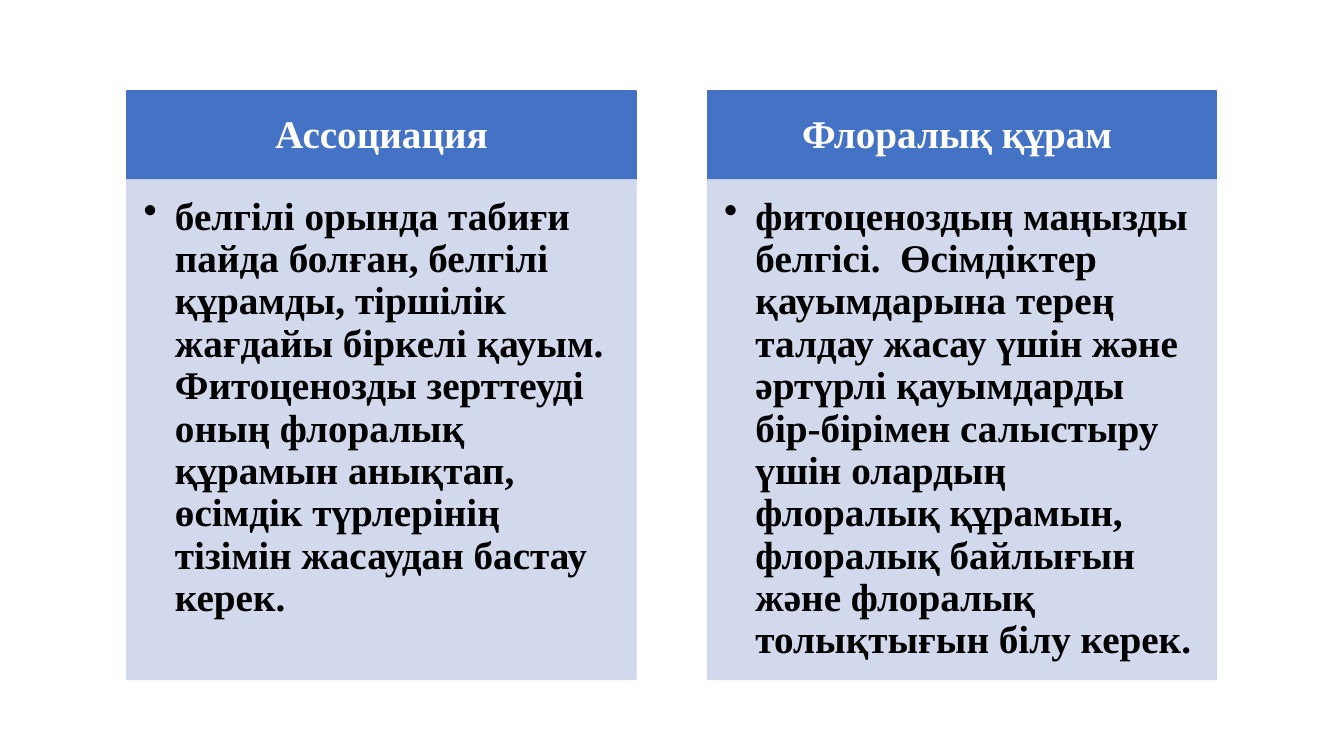
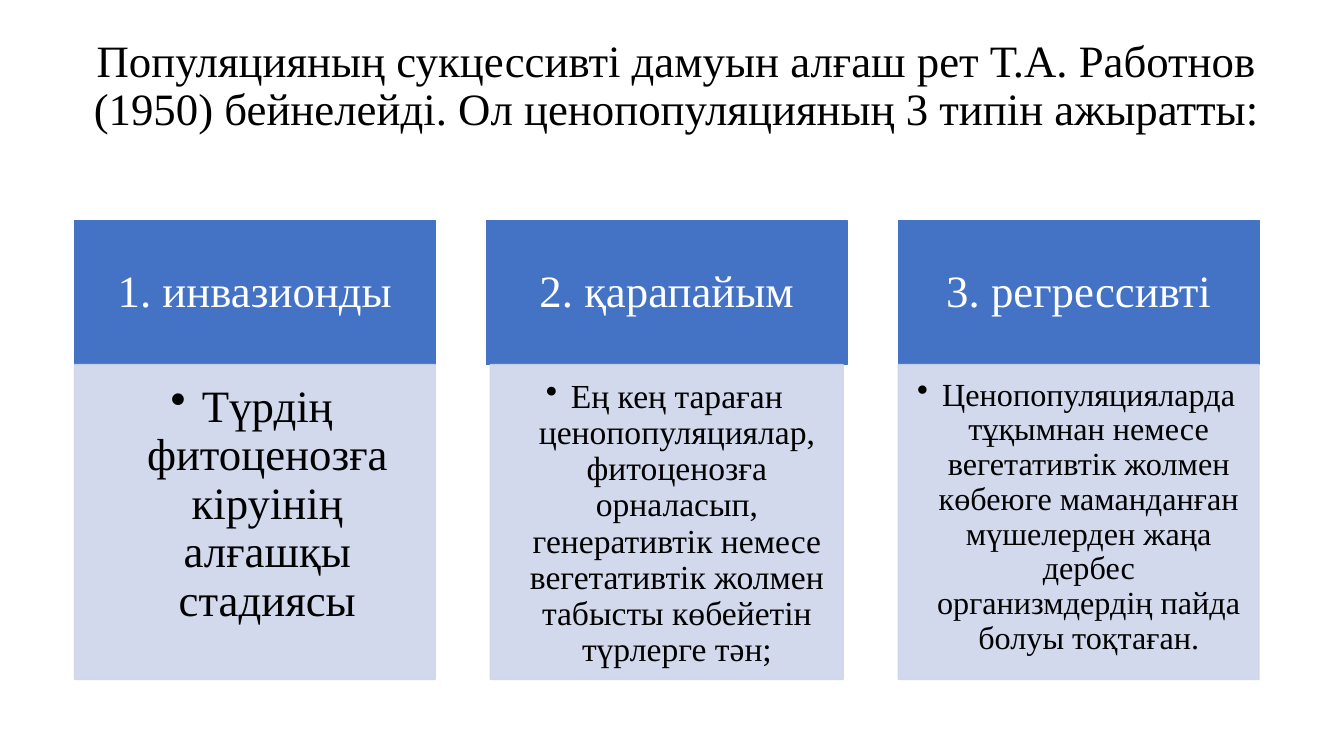
from lxml import etree
from pptx import Presentation
from pptx import util as u
from pptx.dml.color import RGBColor
from pptx.enum import shapes, text
from pptx.oxml.ns import qn

COLORS = {"header": "4472C4", "body": "CFD5EA", "light": "FFFFFF", "dark": "000000"}
FONT = "Times New Roman"
BOTTOM = 17.12
BODY_OPACITY = 90

ASSOCIATION = [
    ("Ассоциация",
     "белгілі орында табиғи пайда болған, белгілі құрамды, тіршілік жағдайы біркелі "
     "қауым. Фитоценозды зерттеуді оның флоралық құрамын анықтап, өсімдік түрлерінің "
     "тізімін жасаудан бастау керек.", 28, 0),
    ("Флоралық құрам ",
     "фитоценоздың маңызды белгісі.  Өсімдіктер қауымдарына терең талдау жасау үшін "
     "және әртүрлі қауымдарды бір-бірімен салыстыру үшін олардың флоралық құрамын, "
     "флоралық байлығын және флоралық толықтығын білу керек.", 28, 0),
]
TITLE = ("Популяцияның сукцессивті дамуын алғаш рет Т.А. Работнов (1950) бейнелейді. "
         "Ол ценопопуляцияның 3 типін ажыратты:")
POPULATION_TYPES = [
    ("1. инвазионды", "Түрдің фитоценозға кіруінің алғашқы стадиясы", 32, 0),
    ("2. қарапайым",
     "Ең кең тараған ценопопуляциялар, фитоценозға орналасып, генеративтік немесе "
     "вегетативтік жолмен табысты көбейетін түрлерге тән;", 24, 0.1),
    ("3. регрессивті",
     "Ценопопуляцияларда тұқымнан немесе вегетативтік жолмен көбеюге маманданған "
     "мүшелерден жаңа дербес организмдердің пайда болуы тоқтаған.", 23, 0),
]


def rgb(name):
    return RGBColor.from_string(COLORS[name])


def write(tf, content, size, color, bold=False, align=text.PP_ALIGN.CENTER):
    tf.text = content
    tf.word_wrap = True
    tf.auto_size = text.MSO_AUTO_SIZE.NONE
    p = tf.paragraphs[0]
    p.alignment = align
    p.line_spacing = 0.9
    font = p.runs[0].font
    font.name, font.size, font.bold = FONT, u.Pt(size), bold
    font.color.rgb = rgb(color)
    return p


def set_margins(tf, left, top, right, bottom):
    tf.margin_left, tf.margin_top = u.Cm(left), u.Cm(top)
    tf.margin_right, tf.margin_bottom = u.Cm(right), u.Cm(bottom)


def add_bullet(p, indent):
    p.level = 1
    pPr = p._p.get_or_add_pPr()
    pPr.set("marL", str(u.Cm(indent)))
    pPr.set("indent", str(-u.Cm(indent)))
    etree.SubElement(pPr, qn("a:buChar"), char="•")


def add_box(s, left, top, width, height, color, opacity=100):
    sp = s.shapes.add_shape(shapes.MSO_SHAPE.RECTANGLE,
                            u.Cm(left), u.Cm(top), u.Cm(width), u.Cm(height))
    sp.shadow.inherit = False
    sp.fill.solid()
    sp.fill.fore_color.rgb = rgb(color)
    sp.line.color.rgb = rgb(color)
    sp.line.width = u.Pt(1)
    if opacity < 100:
        for clr in sp._element.spPr.iter(qn("a:srgbClr")):
            etree.SubElement(clr, qn("a:alpha"), val=str(opacity * 1000))
    return sp


def add_header(s, left, top, width, height, content, size, bold):
    tf = add_box(s, left, top, width, height, "header").text_frame
    write(tf, content, size, "light", bold)
    tf.vertical_anchor = text.MSO_ANCHOR.MIDDLE
    side, edge = 0.02 * size, 0.01125 * size
    set_margins(tf, side, edge, side, edge)


def add_body(s, left, top, width, content, size, bold, align):
    tf = add_box(s, left, top, width, BOTTOM - top, "body", BODY_OPACITY).text_frame
    p = write(tf, content, size, "dark", bold, align)
    tf.vertical_anchor = text.MSO_ANCHOR.TOP
    set_margins(tf, 0.015 * size, 0.015 * size, 0.02 * size, 0.0225 * size)
    add_bullet(p, 0.79 if size >= 28 else 0.63)


def add_columns(s, columns, left, top, width, gap, header_height, header_size,
                bold=False, align=text.PP_ALIGN.CENTER):
    """Each column is (heading, body text, body size, body side inset in cm)."""
    for i, (heading, content, size, inset) in enumerate(columns):
        x = left + i * (width + gap)
        add_header(s, x, top, width, header_height, heading, header_size, bold)
        add_body(s, x + inset, top + header_height, width - 2 * inset,
                 content, size, bold, align)


def add_title(s, content):
    sp = s.shapes.title
    sp.left, sp.top, sp.width, sp.height = u.Cm(1.22), u.Cm(0.36), u.Cm(31.67), u.Cm(3.66)
    write(sp.text_frame, content, 32, "dark")
    sp.text_frame.vertical_anchor = text.MSO_ANCHOR.MIDDLE


def main():
    prs = Presentation()
    prs.slide_width, prs.slide_height = u.Cm(33.87), u.Cm(19.05)
    title_only, blank = prs.slide_layouts[5], prs.slide_layouts[6]

    s = prs.slides.add_slide(blank)
    add_columns(s, ASSOCIATION, left=3.2, top=2.29, width=12.83, gap=1.8,
                header_height=2.24, header_size=28, bold=True,
                align=text.PP_ALIGN.LEFT)

    s = prs.slides.add_slide(title_only)
    add_title(s, TITLE)
    add_columns(s, POPULATION_TYPES, left=1.88, top=5.56, width=9.09, gap=1.29,
                header_height=3.63, header_size=32)

    prs.save("out.pptx")


if __name__ == "__main__":
    main()
